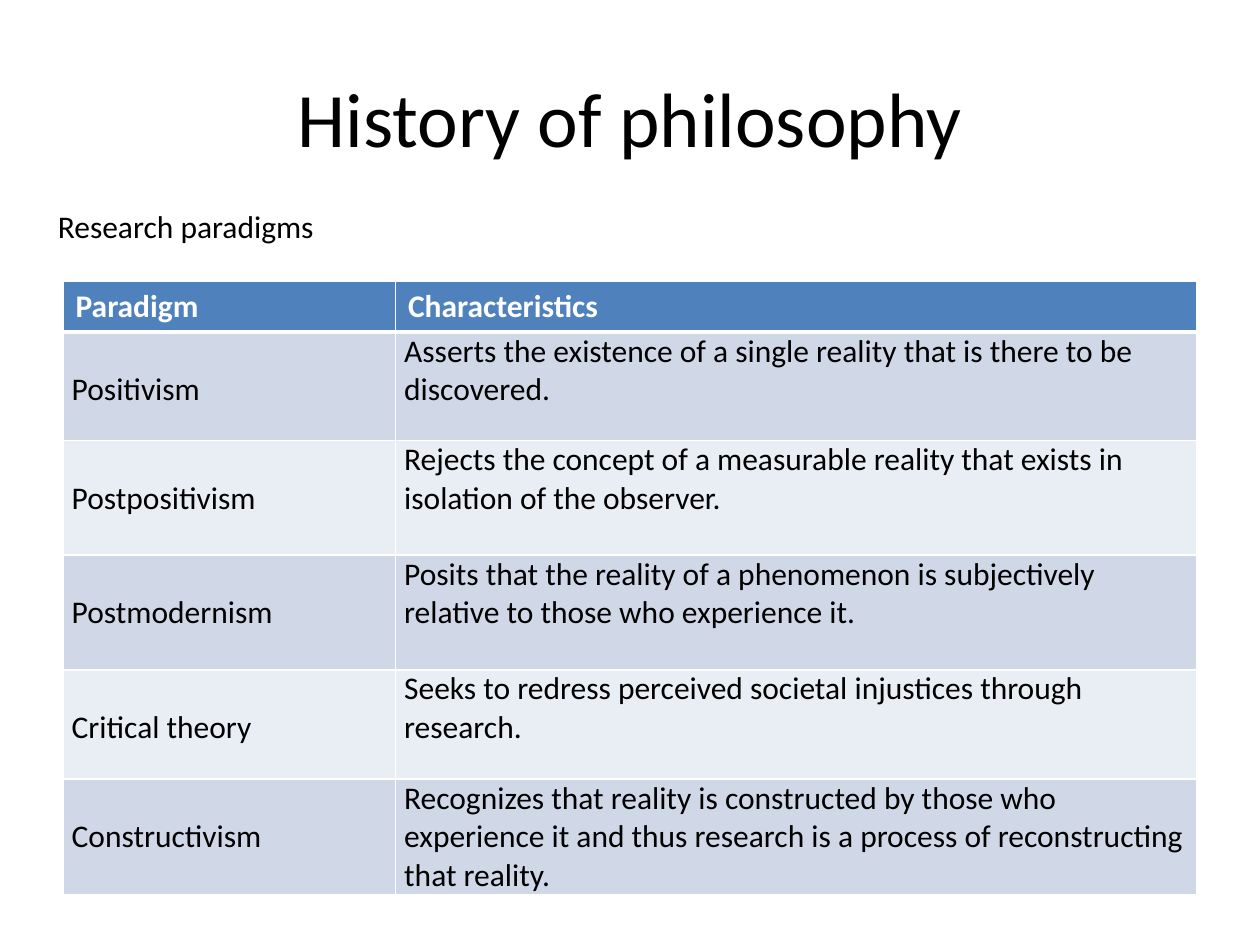
"""Build the slide on research paradigms in the history of philosophy."""
from dataclasses import dataclass

from lxml.etree import SubElement
from pptx import Presentation
from pptx.dml.color import RGBColor
from pptx.enum.text import MSO_ANCHOR as Anchor, MSO_AUTO_SIZE as AutoSize, PP_ALIGN as Align
from pptx.oxml.ns import qn
from pptx.util import Pt


@dataclass(frozen=True)
class Theme:
    font: str = "Calibri"
    title_size: int = 44
    text_size: int = 18
    ink: str = "000000"
    paper: str = "FFFFFF"
    header: str = "4F81BD"
    bands: tuple = ("D0D8E8", "E9EDF4")


theme = Theme()


def write(frame, text, size=theme.text_size, color=theme.ink, bold=False,
          align=Align.LEFT, spacing=None):
    paragraph = frame.paragraphs[0]
    paragraph.alignment = align
    if spacing:
        paragraph.line_spacing = spacing
    run = paragraph.add_run()
    run.text = text
    run.font.name = theme.font
    run.font.size = Pt(size)
    run.font.bold = bold
    run.font.color.rgb = RGBColor.from_string(color)


def rule_cell(cell, top=1, bottom=1):
    properties = cell._tc.get_or_add_tcPr()
    widths = {"a:lnL": 1, "a:lnR": 1, "a:lnT": top, "a:lnB": bottom}
    for position, (edge, width) in enumerate(widths.items()):
        line = SubElement(properties, qn(edge), w=str(Pt(width)))
        fill = SubElement(line, qn("a:solidFill"))
        SubElement(fill, qn("a:srgbClr"), val=theme.paper)
        properties.insert(position, line)


headings = ("Paradigm", "Characteristics")
paradigms = (
    ("Positivism", "Asserts the existence of a single reality that is there to be discovered."),
    ("Postpositivism", "Rejects the concept of a measurable reality that exists in "
                       "isolation of the observer."),
    ("Postmodernism", "Posits that the reality of a phenomenon is subjectively "
                      "relative to those who experience it."),
    ("Critical theory", "Seeks to redress perceived societal injustices through research."),
    ("Constructivism", "Recognizes that reality is constructed by those who experience it "
                       "and thus research is a process of reconstructing that reality."),
)
column_widths = (190, 458)
row_heights = (29.2, 62, 65.5, 65.5, 62.5, 65)

presentation = Presentation()
presentation.slide_width, presentation.slide_height = Pt(720), Pt(540)
slide = presentation.slides.add_slide(presentation.slide_layouts[5])

title = slide.shapes.title
title.left, title.top, title.width, title.height = Pt(36), Pt(21.6), Pt(648), Pt(90)
title.text_frame.vertical_anchor = Anchor.MIDDLE
write(title.text_frame, "History of philosophy", size=theme.title_size, align=Align.CENTER)

overview = slide.shapes.add_table(
    len(row_heights), len(column_widths), Pt(36), Pt(160.6),
    Pt(sum(column_widths)), Pt(sum(row_heights))).table
for column, width in zip(overview.columns, column_widths):
    column.width = Pt(width)
for row, height in zip(overview.rows, row_heights):
    row.height = Pt(height)

for cell, heading in zip(overview.rows[0].cells, headings):
    cell.fill.solid()
    cell.fill.fore_color.rgb = RGBColor.from_string(theme.header)
    rule_cell(cell, bottom=3)
    write(cell.text_frame, heading, color=theme.paper, bold=True)

for number, paradigm in enumerate(paradigms, start=1):
    band = theme.bands[(number - 1) % len(theme.bands)]
    for cell, text, spacing in zip(overview.rows[number].cells, paradigm, (2, None)):
        cell.margin_left = cell.margin_right = Pt(5)
        cell.margin_top = cell.margin_bottom = Pt(0)
        cell.fill.solid()
        cell.fill.fore_color.rgb = RGBColor.from_string(band)
        rule_cell(cell, top=3 if number == 1 else 1)
        write(cell.text_frame, text, spacing=spacing)

subtitle = slide.shapes.add_textbox(Pt(26), Pt(114.5), Pt(163.5), Pt(29)).text_frame
subtitle.word_wrap = False
subtitle.auto_size = AutoSize.SHAPE_TO_FIT_TEXT
write(subtitle, "Research paradigms")

presentation.save("out.pptx")
